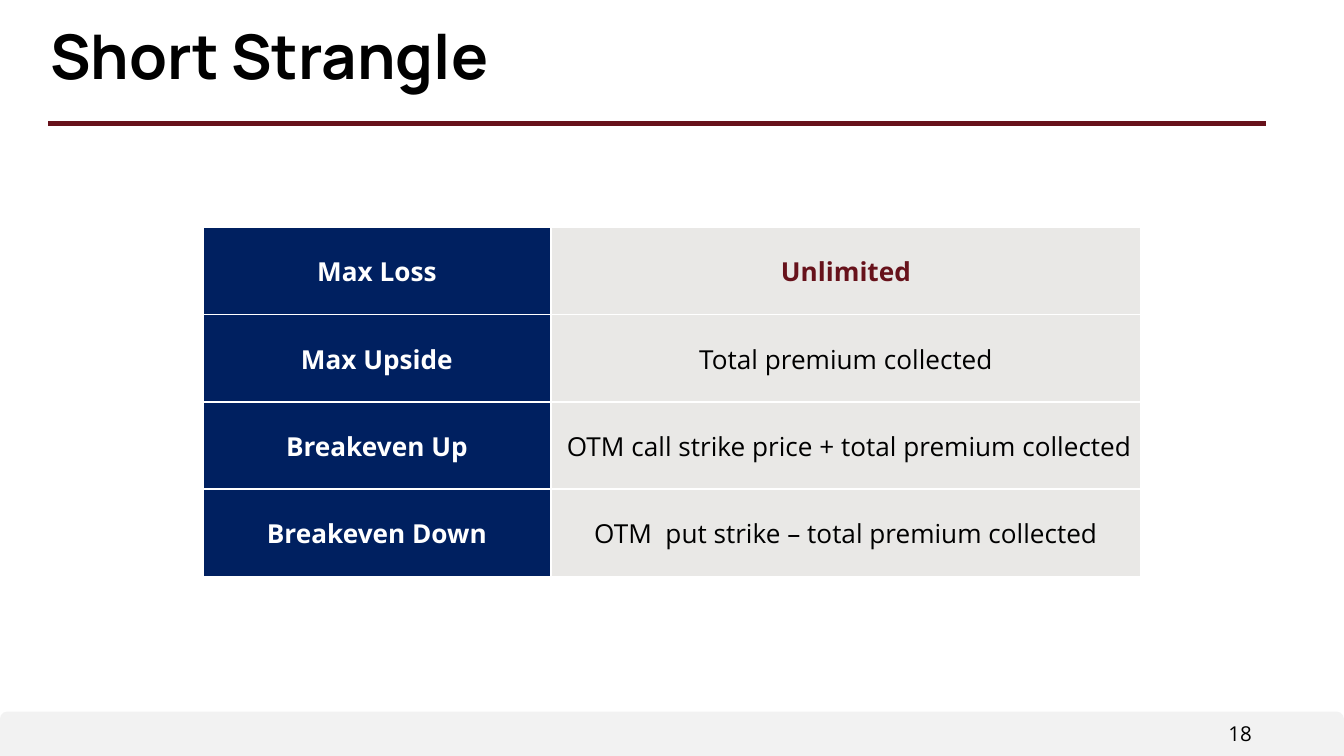
from lxml.etree import SubElement
from pptx import Presentation
from pptx.dml.color import RGBColor
from pptx.enum.shapes import MSO_CONNECTOR, MSO_SHAPE
from pptx.enum.text import MSO_ANCHOR, PP_ALIGN
from pptx.oxml.ns import qn
from pptx.util import Inches, Pt

TITLE = "Short Strangle"
PAGE = "18"
ROWS = [
    ("Max Loss", "Unlimited"),
    ("Max Upside", "Total premium collected"),
    ("Breakeven Up", " OTM call strike price + total premium collected"),
    ("Breakeven Down", "OTM  put strike – total premium collected"),
]
ALERT = "Unlimited"
HEX = {"navy": "002060", "wine": "67121B", "grey": "E9E8E6",
       "foot": "F2F2F2", "white": "FFFFFF", "black": "000000"}
HEAD, BODY = "Manrope", "Open Sans"
WIDE = 10
HIGH = WIDE * 9 / 16
COLS, ROW = (2.59, 4.39), 0.65
FOOT = 0.33


def color(name):
    return RGBColor.from_string(HEX[name])


def write(para, text, size, face, tone, bold=False):
    run = para.add_run()
    run.text = text
    font = run.font
    font.size, font.name, font.bold = Pt(size), face, bold
    font.color.rgb = color(tone)


def add_text(box, text, size, face, bold=False, align=PP_ALIGN.LEFT):
    frame = slide.shapes.add_textbox(*map(Inches, box)).text_frame
    frame.word_wrap = True
    frame.margin_left = frame.margin_right = Pt(5.4)
    frame.margin_top = frame.margin_bottom = Pt(2.7)
    para = frame.paragraphs[0]
    para.alignment = align
    write(para, text, size, face, "black", bold)
    return para


def edge(cell):
    """Draw a thin white border on all four sides, ahead of the fill."""
    props = cell._tc.get_or_add_tcPr()
    for side in ("lnL", "lnR", "lnT", "lnB"):
        line = SubElement(props, qn("a:" + side), w=str(Pt(1)))
        fill = SubElement(line, qn("a:solidFill"))
        SubElement(fill, qn("a:srgbClr"), val=HEX["white"])


def fill_cell(cell, text, back, tone, bold):
    edge(cell)
    cell.fill.solid()
    cell.fill.fore_color.rgb = color(back)
    cell.vertical_anchor = MSO_ANCHOR.MIDDLE
    cell.margin_left = cell.margin_right = cell.margin_top = Inches(0.01)
    cell.margin_bottom = 0
    para = cell.text_frame.paragraphs[0]
    para.alignment = PP_ALIGN.CENTER
    write(para, text, 14, BODY, tone, bold)


deck = Presentation()
deck.slide_width, deck.slide_height = Inches(WIDE), Inches(HIGH)
slide = deck.slides.add_slide(deck.slide_layouts[6])

# Footer band and page number
band = slide.shapes.add_shape(
    MSO_SHAPE.ROUND_2_SAME_RECTANGLE,
    *map(Inches, (0, HIGH - FOOT, WIDE, FOOT)))
band.adjustments[0], band.adjustments[1] = 0.167, 0
band.shadow.inherit = False
band.fill.solid()
band.fill.fore_color.rgb = color("foot")
band.line.fill.background()
add_text((8.12, 5.33, 1.27, 0.25), PAGE, 11, BODY, align=PP_ALIGN.RIGHT)

# Title and rule
rule = slide.shapes.add_connector(
    MSO_CONNECTOR.STRAIGHT, *map(Inches, (0.36, 0.92, 9.42, 0.92)))
rule.line.color.rgb = color("wine")
rule.line.width = Pt(2.5)
SubElement(rule._element.spPr, qn("a:effectLst"))
add_text((0.3, 0.16, 9.31, 0.68), TITLE, 33, HEAD, True).line_spacing = 0.9

# Table, centred across the slide
width = sum(COLS)
grid = slide.shapes.add_table(
    len(ROWS), len(COLS), Inches((WIDE - width) / 2), Inches(1.69),
    Inches(width), Inches(ROW * len(ROWS))).table
for col, size in zip(grid.columns, COLS):
    col.width = Inches(size)
for row, (label, value) in zip(grid.rows, ROWS):
    row.height = Inches(ROW)
    left, right = row.cells
    alert = value == ALERT
    fill_cell(left, label, "navy", "white", True)
    fill_cell(right, value, "grey", "wine" if alert else "black", alert)

deck.save("out.pptx")
